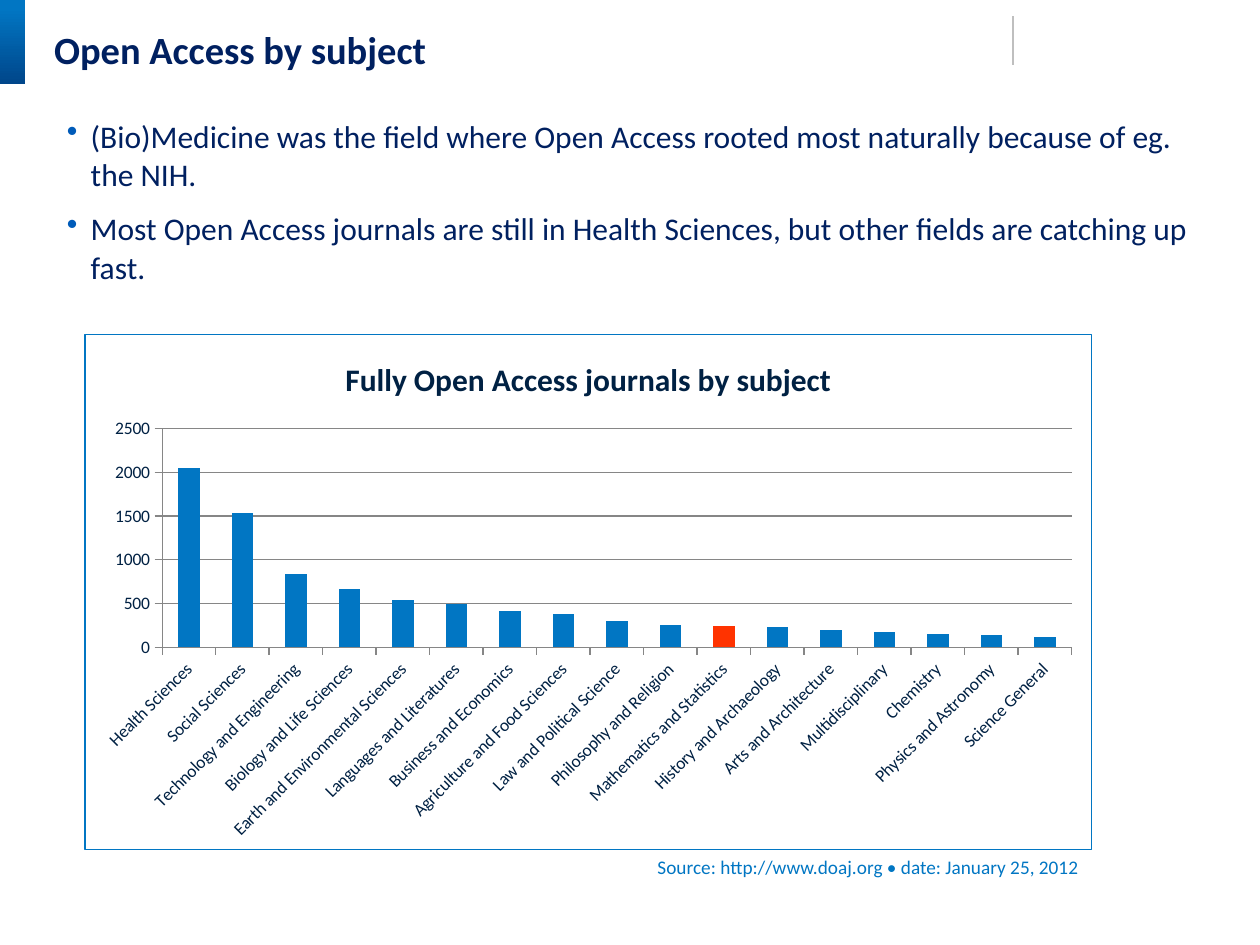
from pptx import Presentation
from pptx.chart.data import CategoryChartData as Data
from pptx.dml.color import RGBColor as RGB
from pptx.enum.chart import XL_CHART_TYPE as Kind, XL_TICK_MARK as Tick
from pptx.enum.shapes import MSO_CONNECTOR as Link, MSO_SHAPE as Form
from pptx.enum.text import MSO_ANCHOR as Anchor, PP_ALIGN as Align
from pptx.oxml import parse_xml
from pptx.oxml.ns import nsdecls, qn
from pptx.util import Inches, Pt

NAVY = RGB(0x00, 0x20, 0x60)
INK = RGB(0x00, 0x21, 0x43)
BLUE = RGB(0x01, 0x76, 0xC3)
DEEP = RGB(0x00, 0x46, 0x8A)
DOT = RGB(0x00, 0x5B, 0xB9)
RED = RGB(0xFF, 0x33, 0x00)
GREY = RGB(0x86, 0x86, 0x86)
PALE = RGB(0xBF, 0xBF, 0xBF)
FACE = "Calibri"
MARK = 10

POINTS = [
    "(Bio)Medicine was the field where Open Access rooted most naturally because of eg. the NIH.",
    "Most Open Access journals are still in Health Sciences, but other fields are catching up fast.",
]
COUNTS = {
    "Health Sciences": 2050,
    "Social Sciences": 1540,
    "Technology and Engineering": 840,
    "Biology and Life Sciences": 670,
    "Earth and Environmental Sciences": 540,
    "Languages and Literatures": 490,
    "Business and Economics": 410,
    "Agriculture and Food Sciences": 380,
    "Law and Political Science": 300,
    "Philosophy and Religion": 260,
    "Mathematics and Statistics": 240,
    "History and Archaeology": 230,
    "Arts and Architecture": 200,
    "Multidisciplinary": 170,
    "Chemistry": 150,
    "Physics and Astronomy": 140,
    "Science General": 120,
}


def style(font, size, color, bold=False):
    """Set the face, size, colour and weight of a font."""
    font.name, font.size, font.bold = FACE, Pt(size), bold
    font.color.rgb = color


def bullet(para, indent=0.19):
    """Give a paragraph a coloured bullet and a hanging indent."""
    props = para._p.get_or_add_pPr()
    props.set("marL", str(Inches(indent)))
    props.set("indent", str(-Inches(indent)))
    ns = nsdecls("a")
    props.append(parse_xml(f'<a:buClr {ns}><a:srgbClr val="{DOT}"/></a:buClr>'))
    props.append(parse_xml(f'<a:buChar {ns} char="•"/>'))


def write(box, lines, size=18, color=NAVY, bold=False, align=Align.LEFT,
          pad=0, wrap=True, lead=None, gap=0, dots=False, anchor=Anchor.TOP):
    """Fill a shape with formatted paragraphs."""
    frame = box.text_frame
    frame.word_wrap, frame.vertical_anchor = wrap, anchor
    frame.margin_left = frame.margin_right = Inches(pad)
    frame.margin_top = frame.margin_bottom = Inches(pad / 2)
    for i, line in enumerate(lines):
        para = frame.add_paragraph() if i else frame.paragraphs[0]
        para.alignment, para.line_spacing = align, lead
        para.space_before = Pt(gap if i else 0)
        if dots:
            bullet(para)
        run = para.add_run()
        run.text = line
        style(run.font, size, color, bold)


def place(shape, *area):
    """Move and size a shape in inches."""
    shape.left, shape.top, shape.width, shape.height = map(Inches, area)


def add_box(slide, *area):
    """Add a text box in inches."""
    return slide.shapes.add_textbox(*map(Inches, area))


def add_trim(slide):
    """Draw the corner block and the thin header rule."""
    block = slide.shapes.add_shape(Form.RECTANGLE, 0, 0, Inches(0.2), Inches(0.67))
    block.shadow.inherit = False
    block.line.fill.background()
    block.fill.gradient()
    block.fill.gradient_angle = 270
    for stop, spot, color in zip(block.fill.gradient_stops, (0.1, 1), (BLUE, DEEP)):
        stop.position, stop.color.rgb = spot, color
    ends = map(Inches, (8.04, 0.13, 8.04, 0.52))
    rule = slide.shapes.add_connector(Link.STRAIGHT, *ends)
    rule.line.color.rgb, rule.line.width = PALE, Pt(0.75)
    rule._element.spPr.append(parse_xml(f"<a:effectLst {nsdecls('a')}/>"))


def frame_chart(chart):
    """Put a thin border round the whole chart."""
    edge = parse_xml(
        f'<c:spPr {nsdecls("c", "a")}><a:noFill/><a:ln w="{Pt(0.75)}"><a:solidFill>'
        f'<a:srgbClr val="{BLUE}"/></a:solidFill></a:ln></c:spPr>')
    chart._chartSpace.find(qn("c:chart")).addnext(edge)


def add_bars(slide, *area):
    """Add the column chart with one marked column."""
    data = Data()
    data.categories = list(COUNTS)
    data.add_series("Series 1", list(COUNTS.values()))
    chart = slide.shapes.add_chart(
        Kind.COLUMN_CLUSTERED, *map(Inches, area), data).chart
    style(chart.font, 10, INK)
    chart.has_legend = False
    chart.has_title = True
    head = chart.chart_title.text_frame
    head.text = "Fully Open Access journals by subject"
    style(head.paragraphs[0].runs[0].font, 18, INK, True)
    for axis in (chart.category_axis, chart.value_axis):
        axis.major_tick_mark, axis.minor_tick_mark = Tick.OUTSIDE, Tick.NONE
        axis.format.line.color.rgb = GREY
        axis.format.line.width = Pt(0.75)
    names = chart.category_axis.tick_labels
    style(names.font, 10, INK)
    chart.category_axis._element.txPr.bodyPr.set("rot", str(-45 * 60000))
    scale = chart.value_axis
    scale.minimum_scale, scale.maximum_scale, scale.major_unit = 0, 2500, 500
    scale.has_major_gridlines = True
    scale.major_gridlines.format.line.color.rgb = GREY
    scale.major_gridlines.format.line.width = Pt(0.75)
    plot = chart.plots[0]
    plot.gap_width, plot.vary_by_categories = 150, False
    bars = plot.series[0]
    for part, color in ((bars, BLUE), (bars.points[MARK], RED)):
        part.format.fill.solid()
        part.format.fill.fore_color.rgb = color
    frame_chart(chart)


def main():
    """Build and save the slide."""
    deck = Presentation()
    deck.slide_width, deck.slide_height = Inches(10), Inches(7.5)
    slide = deck.slides.add_slide(deck.slide_layouts[5])
    add_trim(slide)
    title = slide.shapes.title
    place(title, 0.43, 0.25, 9.08, 0.33)
    write(title, ["Open Access by subject"], size=22, bold=True, lead=0.9,
          anchor=Anchor.MIDDLE)
    write(add_box(slide, 0.53, 0.92, 9.08, 1.36), POINTS, lead=Pt(22), gap=9, dots=True)
    write(add_box(slide, 5.07, 6.74, 3.59, 0.29),
          ["Source: http://www.doaj.org • date: January 25, 2012"],
          size=11, color=BLUE, align=Align.RIGHT, pad=0.1, wrap=False)
    add_bars(slide, 0.67, 2.65, 8, 4.1)
    deck.save("out.pptx")


if __name__ == "__main__":
    main()
